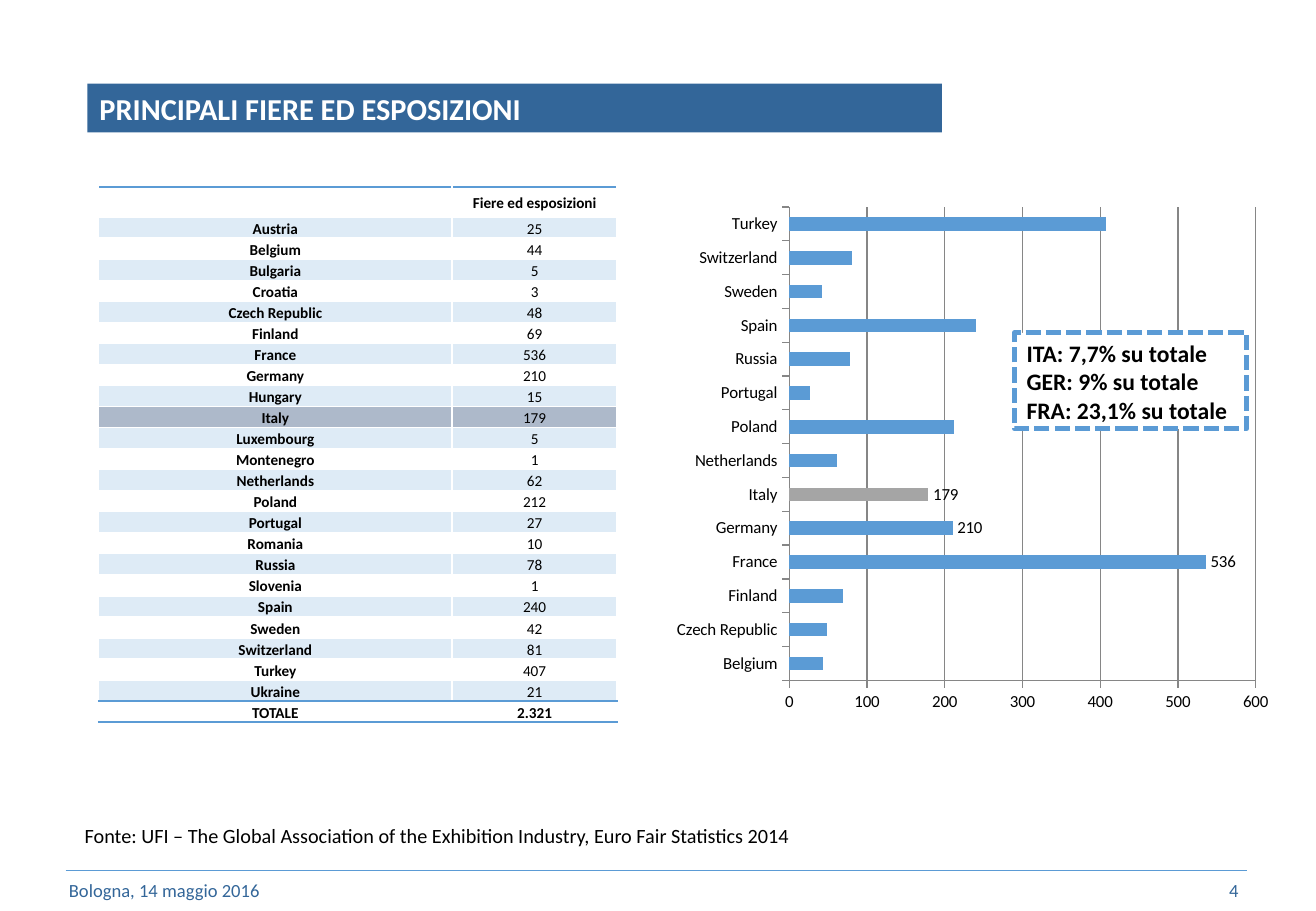
import pptx
import pptx.chart.data
import pptx.dml.color
import pptx.enum.chart
import pptx.enum.dml
import pptx.enum.shapes
import pptx.enum.text
import pptx.oxml
import pptx.oxml.ns
import pptx.util
from lxml import etree

Cm = pptx.util.Cm
Pt = pptx.util.Pt
RGBColor = pptx.dml.color.RGBColor
Align = pptx.enum.text.PP_ALIGN
Anchor = pptx.enum.text.MSO_ANCHOR
qn = pptx.oxml.ns.qn

NAVY = RGBColor(0x33, 0x66, 0x99)
BLUE = RGBColor(0x5B, 0x9B, 0xD5)
SLATE = RGBColor(0xAD, 0xB9, 0xCA)
GRAY = RGBColor(0xA5, 0xA5, 0xA5)
AXIS_GRAY = RGBColor(0x86, 0x86, 0x86)
BLACK = RGBColor(0, 0, 0)
WHITE = RGBColor(0xFF, 0xFF, 0xFF)

FAIRS = {
    "Austria": 25, "Belgium": 44, "Bulgaria": 5, "Croatia": 3,
    "Czech Republic": 48, "Finland": 69, "France": 536, "Germany": 210,
    "Hungary": 15, "Italy": 179, "Luxembourg": 5, "Montenegro": 1,
    "Netherlands": 62, "Poland": 212, "Portugal": 27, "Romania": 10,
    "Russia": 78, "Slovenia": 1, "Spain": 240, "Sweden": 42,
    "Switzerland": 81, "Turkey": 407, "Ukraine": 21,
}
CHARTED = {country: count for country, count in FAIRS.items() if count > 25}
HIGHLIGHT = "Italy"
LABELLED = ("France", "Germany", HIGHLIGHT)


def write(frame, text, size=12, color=BLACK, bold=False, align=Align.LEFT,
          anchor=Anchor.TOP, spacing=None):
    """Put each line of text in its own paragraph of the frame."""
    frame.word_wrap = True
    frame.vertical_anchor = anchor
    for index, line in enumerate(text.split("\n")):
        paragraph = frame.add_paragraph() if index else frame.paragraphs[0]
        paragraph.alignment = align
        paragraph.line_spacing = spacing
        if not line:
            etree.SubElement(paragraph._p, qn("a:endParaRPr"), sz=str(size * 100))
            continue
        run = paragraph.add_run()
        run.text = line
        run.font.name = "Calibri"
        run.font.size = Pt(size)
        run.font.bold = bold
        run.font.color.rgb = color


def rule_cell(cell):
    """Draw a blue line above and below the cell."""
    for side in ("lnT", "lnB"):
        cell._tc.get_or_add_tcPr().append(pptx.oxml.parse_xml(
            f'<a:{side} xmlns:a="http://schemas.openxmlformats.org/drawingml/2006/main"'
            f' w="12700"><a:solidFill><a:srgbClr val="{BLUE}"/></a:solidFill></a:{side}>'))


def fill_cell(cell, color, opacity=100):
    if color is None:
        cell.fill.background()
        return
    cell.fill.solid()
    cell.fill.fore_color.rgb = color
    if opacity < 100:
        tint = cell._tc.tcPr.find(".//" + qn("a:srgbClr"))
        etree.SubElement(tint, qn("a:alpha"), val=str(opacity * 1000))


class FairSlide:
    def __init__(self, presentation):
        self.shapes = presentation.slides.add_slide(
            presentation.slide_layouts[6]).shapes

    def text(self, left, top, width, height, text, **style):
        box = self.shapes.add_textbox(Cm(left), Cm(top), Cm(width), Cm(height))
        write(box.text_frame, text, **style)

    def panel(self, left, top, width, height, text, fill, line=None, **style):
        panel = self.shapes.add_shape(
            pptx.enum.shapes.MSO_SHAPE.RECTANGLE,
            Cm(left), Cm(top), Cm(width), Cm(height))
        panel.shadow.inherit = False
        panel.fill.solid()
        panel.fill.fore_color.rgb = fill
        if line is None:
            panel.line.fill.background()
        else:
            panel.line.color.rgb = line
            panel.line.width = Pt(3)
            panel.line.dash_style = pptx.enum.dml.MSO_LINE.SQUARE_DOT
            panel.line._ln.find(qn("a:prstDash")).set("val", "sysDash")
        write(panel.text_frame, text, **style)

    def rule(self, left, right, y):
        rule = self.shapes.add_connector(
            pptx.enum.shapes.MSO_CONNECTOR.STRAIGHT,
            Cm(left), Cm(y), Cm(right), Cm(y))
        rule.line.color.rgb = BLUE
        rule.line.width = Pt(0.25)
        etree.SubElement(rule._element.spPr, qn("a:effectLst"))

    def table(self, left, top, widths, header_height, row_height, rows):
        """Draw rows whose first is the header and last the total."""
        last = len(rows) - 1
        table = self.shapes.add_table(
            len(rows), len(widths), Cm(left), Cm(top), Cm(sum(widths)),
            Cm(header_height + last * row_height)).table
        table.first_row = table.horz_banding = False
        for column, width in zip(table.columns, widths):
            column.width = Cm(width)
        for r, row in enumerate(rows):
            table.rows[r].height = Cm(row_height if r else header_height)
            framed = r in (0, last)
            for c, text in enumerate(row):
                cell = table.cell(r, c)
                cell.margin_left = cell.margin_right = Cm(0.18)
                cell.margin_top = cell.margin_bottom = 0
                write(cell.text_frame, text, size=9, bold=framed or c == 0,
                      align=Align.CENTER, spacing=1.15)
                cell.vertical_anchor = Anchor.MIDDLE
                if framed:
                    rule_cell(cell)
                if row[0] == HIGHLIGHT:
                    fill_cell(cell, SLATE)
                else:
                    fill_cell(cell, BLUE if r % 2 and not framed else None, 20)

    def bar_chart(self, left, top, width, height, counts):
        data = pptx.chart.data.CategoryChartData()
        data.categories = list(counts)
        data.add_series("Fiere ed esposizioni", list(counts.values()))
        chart = self.shapes.add_chart(
            pptx.enum.chart.XL_CHART_TYPE.BAR_CLUSTERED,
            Cm(left), Cm(top), Cm(width), Cm(height), data).chart
        chart.has_legend = chart.has_title = False
        chart.font.name = "Calibri"
        chart.font.size = Pt(10)
        chart.font.color.rgb = BLACK

        values = chart.value_axis
        values.minimum_scale, values.maximum_scale = 0, 600
        values.major_unit = 100
        values.has_major_gridlines = True
        for part in (values, values.major_gridlines, chart.category_axis):
            part.format.line.color.rgb = AXIS_GRAY
            part.format.line.width = Pt(0.75)
        for axis in (values, chart.category_axis):
            axis.major_tick_mark = pptx.enum.chart.XL_TICK_MARK.OUTSIDE

        plot = chart.plots[0]
        plot.gap_width = 150
        plot.vary_by_categories = False
        bars = plot.series[0]
        bars.format.fill.solid()
        bars.format.fill.fore_color.rgb = BLUE
        bars.data_labels.show_value = False
        for index, country in enumerate(counts):
            if country in LABELLED:
                bars.points[index].data_label.position = (
                    pptx.enum.chart.XL_LABEL_POSITION.OUTSIDE_END)
            if country == HIGHLIGHT:
                bar_fill = bars.points[index].format.fill
                bar_fill.solid()
                bar_fill.fore_color.rgb = GRAY

        area = chart._chartSpace.chart.plotArea
        for old in area.findall(qn("c:layout")):
            area.remove(old)
        layout = etree.Element(qn("c:layout"))
        manual = etree.SubElement(layout, qn("c:manualLayout"))
        for tag, value in (("layoutTarget", "inner"), ("xMode", "edge"),
                           ("yMode", "edge"), ("x", "0.21"), ("y", "0.02"),
                           ("w", "0.75"), ("h", "0.9")):
            etree.SubElement(manual, qn("c:" + tag), val=value)
        area.insert(0, layout)


def main():
    presentation = pptx.Presentation()
    presentation.slide_width, presentation.slide_height = Cm(27.51), Cm(19.05)
    slide = FairSlide(presentation)
    footer = dict(size=11, color=NAVY, anchor=Anchor.MIDDLE)

    slide.rule(1.37, 26.06, 18.19)
    slide.text(1.19, 18.19, 6.88, 0.86, "Bologna, 14 maggio 2016", **footer)
    rows = [("", "Fiere ed esposizioni")]
    rows += [(country, str(count)) for country, count in FAIRS.items()]
    rows.append(("TOTALE", f"{sum(FAIRS.values()):,}".replace(",", ".")))
    slide.table(2.06, 3.91, (7.39, 3.45), 0.63, 0.44, rows)
    slide.bar_chart(13.77, 4.11, 13, 11, CHARTED)
    slide.panel(1.83, 1.75, 17.86, 1.02, "PRINCIPALI FIERE ED ESPOSIZIONI",
                NAVY, size=18, color=WHITE, bold=True, anchor=Anchor.MIDDLE)
    slide.text(19.71, 18.11, 6.43, 1.02, "4", align=Align.RIGHT, **footer)
    slide.panel(21.21, 6.96, 4.85, 2.01,
                "ITA: 7,7% su totale\nGER: 9% su totale\nFRA: 23,1% su totale",
                WHITE, line=BLUE, size=14, bold=True)
    slide.text(1.52, 17.09, 23.01, 0.76,
               "Fonte: UFI – The Global Association of the Exhibition Industry, "
               "Euro Fair Statistics 2014")
    presentation.save("out.pptx")


if __name__ == "__main__":
    main()
